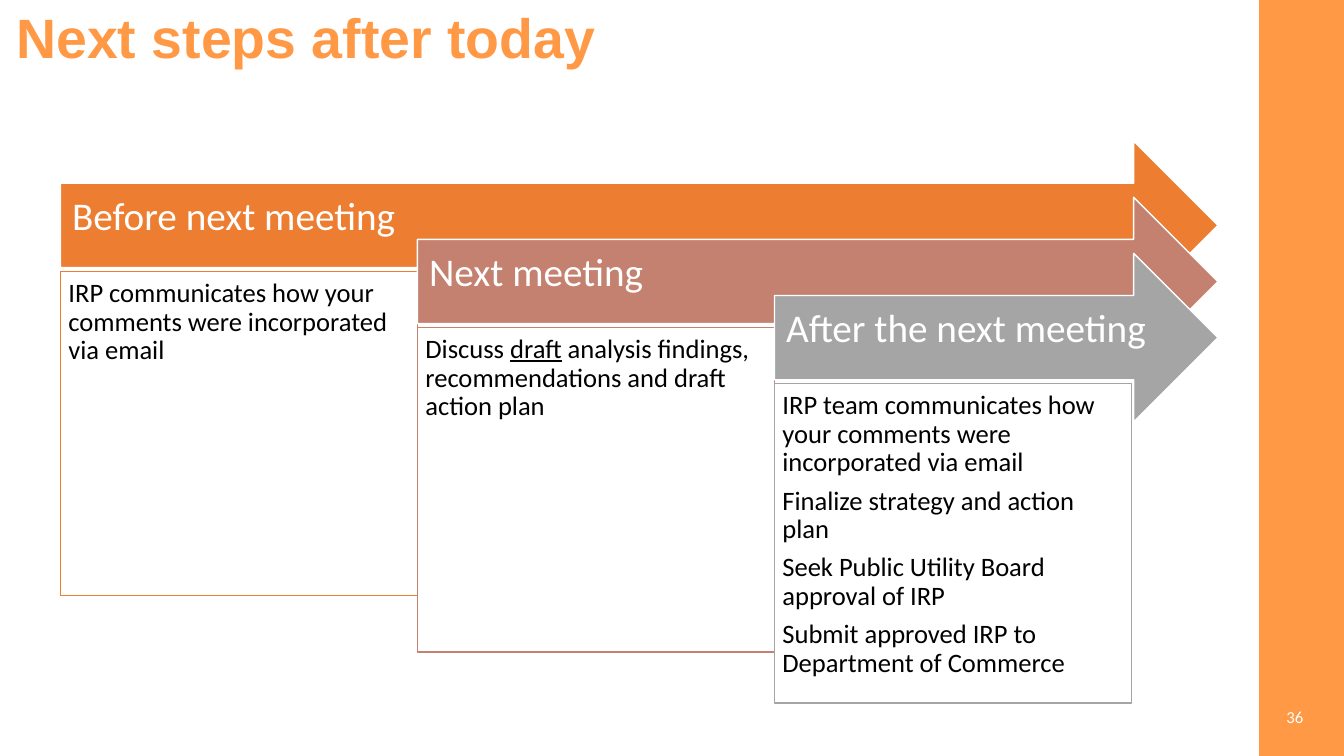
from pptx import Presentation
from pptx.dml.color import RGBColor
from pptx.enum import shapes, text
from pptx.util import Pt

WHITE = RGBColor(0xFF, 0xFF, 0xFF)
BLACK = RGBColor(0, 0, 0)
AMBER = RGBColor(0xFF, 0x99, 0x46)
ORANGE = RGBColor(0xED, 0x7D, 0x31)
ROSE = RGBColor(0xC4, 0x81, 0x70)
GREY = RGBColor(0xA5, 0xA5, 0xA5)

# Heading, colour, box height, paragraphs of (words, underlined) runs
STEPS = [
    ("Before next meeting", ORANGE, 231.8,
     [[("IRP communicates how your comments were incorporated via email", False)]]),
    ("Next meeting", ROSE, 231.8,
     [[("Discuss ", False), ("draft", True),
       (" analysis findings, recommendations and draft action plan", False)]]),
    ("After the next meeting", GREY, 228.2,
     [[("IRP team communicates how your comments were incorporated via email", False)],
      [("Finalize strategy and action plan", False)],
      [("Seek Public Utility Board approval of IRP", False)],
      [("Submit approved IRP to Department of Commerce", False)]]),
]
LEFT, TOP, RIGHT = 43.2, 100.8, 870
STEP_X, STEP_Y = 255, 40.1
ARROW_H, BOX_DROP, BOX_W = 120.4, 93, 255


def add_block(slide, kind, area, fill, line):
    shape = slide.shapes.add_shape(kind, *map(Pt, area))
    shape.shadow.inherit = False
    shape.fill.solid()
    shape.fill.fore_color.rgb = fill
    shape.line.color.rgb = line
    shape.line.width = Pt(1)
    return shape


def set_frame(shape, anchor, insets):
    frame = shape.text_frame
    frame.word_wrap = True
    frame.vertical_anchor = anchor
    (frame.margin_left, frame.margin_top,
     frame.margin_right, frame.margin_bottom) = map(Pt, insets)
    return frame


def style(para, size, color, face="Calibri", bold=False,
          align=text.PP_ALIGN.LEFT, spacing=0.9, after=0):
    para.alignment = align
    para.line_spacing = spacing
    para.space_after = Pt(after)
    font = para.font
    font.name, font.size, font.bold = face, Pt(size), bold
    font.color.rgb = color


def add_label(slide, area, words, *look, **more):
    box = slide.shapes.add_textbox(*map(Pt, area))
    frame = set_frame(box, text.MSO_ANCHOR.MIDDLE, (7.2, 3.6, 7.2, 3.6))
    para = frame.paragraphs[0]
    para.text = words
    style(para, *look, **more)


def add_step(slide, index, title, color, height, paras):
    x, y = LEFT + index * STEP_X, TOP + index * STEP_Y

    # Arrow with heading
    arrow = add_block(slide, shapes.MSO_SHAPE.RIGHT_ARROW,
                      (x, y, RIGHT - x, ARROW_H), color, WHITE)
    frame = set_frame(arrow, text.MSO_ANCHOR.MIDDLE, (8.4, 8.4, 20, 19.2))
    frame.paragraphs[0].text = title
    style(frame.paragraphs[0], 28, WHITE, after=9.8)

    # Box with details
    box = add_block(slide, shapes.MSO_SHAPE.RECTANGLE,
                    (x, y + BOX_DROP, BOX_W, height), WHITE, color)
    frame = set_frame(box, text.MSO_ANCHOR.TOP, (5.7,) * 4)
    for i, runs in enumerate(paras):
        para = frame.add_paragraph() if i else frame.paragraphs[0]
        for words, under in runs:
            run = para.add_run()
            run.text = words
            if under:
                run.font.underline = True
        style(para, 19, BLACK, after=6.65)


def main():
    deck = Presentation()
    deck.slide_width, deck.slide_height = Pt(960), Pt(540)
    slide = deck.slides.add_slide(deck.slide_layouts[6])

    # Side band and title
    add_block(slide, shapes.MSO_SHAPE.RECTANGLE, (900, 0, 60, 540), AMBER, AMBER)
    add_label(slide, (4.5, 5.6, 735, 46), "Next steps after today",
              39.6, AMBER, "Arial", True)

    # Staggered steps
    for index, step in enumerate(STEPS):
        add_step(slide, index, *step)

    # Slide number
    add_label(slide, (722, 497.8, 216, 28.8), "36", 12, WHITE,
              align=text.PP_ALIGN.RIGHT, spacing=1.0)

    deck.save("out.pptx")


if __name__ == "__main__":
    main()
